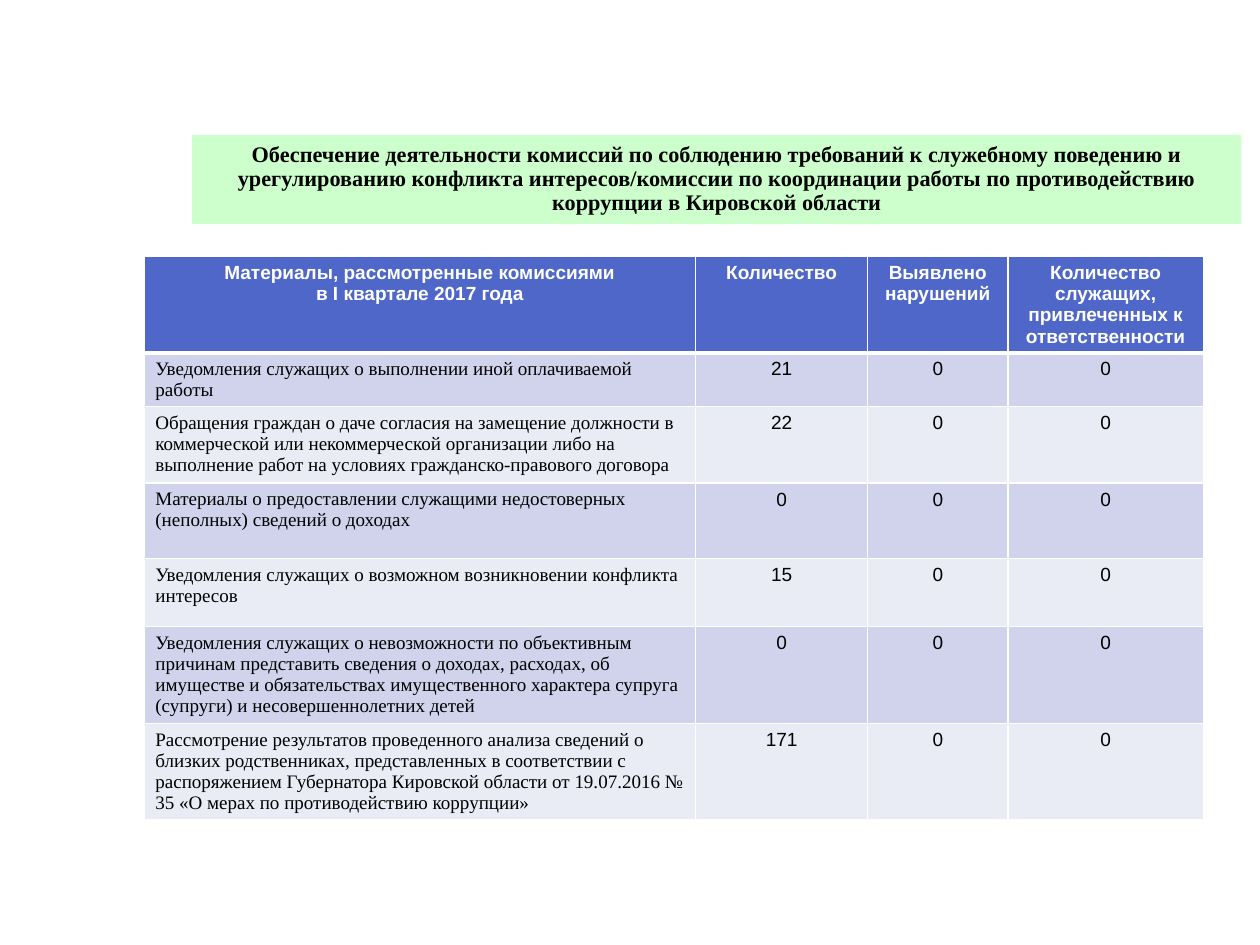
"""Build a slide with a title band and a table of materials reviewed by commissions."""
from lxml import etree
from pptx import Presentation
from pptx import util as u
from pptx.dml.color import RGBColor
from pptx.enum import shapes, text
from pptx.oxml.ns import qn

hues = {"head": "4E67C8", "odd": "D0D3EB", "even": "E9EBF5",
        "band": "CCFFCC", "white": "FFFFFF", "black": "000000"}
title = ("Обеспечение деятельности комиссий по соблюдению требований к служебному поведению и "
         "урегулированию конфликта интересов/комиссии по координации работы по противодействию "
         "коррупции в Кировской области")
rows = [
    ("Материалы, рассмотренные комиссиями\vв I квартале 2017 года", "Количество",
     "Выявлено нарушений", "Количество служащих, привлеченных к ответственности"),
    ("Уведомления служащих о выполнении иной оплачиваемой работы", "21", "0", "0"),
    ("Обращения граждан о даче согласия на замещение должности в коммерческой или "
     "некоммерческой организации либо на выполнение работ на условиях "
     "гражданско-правового договора", "22", "0", "0"),
    ("Материалы о предоставлении служащими недостоверных (неполных) сведений о доходах",
     "0", "0", "0"),
    ("Уведомления служащих о возможном возникновении конфликта интересов", "15", "0", "0"),
    ("Уведомления служащих о невозможности по объективным причинам представить сведения "
     "о доходах, расходах, об имуществе и обязательствах имущественного характера супруга "
     "(супруги) и несовершеннолетних детей", "0", "0", "0"),
    ("Рассмотрение результатов проведенного анализа сведений о близких родственниках, "
     "представленных в соответствии с распоряжением Губернатора Кировской области от "
     "19.07.2016 № 35 «О мерах по противодействию коррупции»", "171", "0", "0"),
]
widths = [12.26, 3.82, 3.12, 4.34]
heights = [1.9, 1.1, 1.7, 1.68, 1.51, 2.15, 1.9]


def write(frame, words, hue, align, space, **form):
    """Put one formatted paragraph into a text frame."""
    frame.text = words
    para = frame.paragraphs[0]
    para.alignment, para.line_spacing = align, space
    for key, value in form.items():
        setattr(para.font, key, value)
    para.font.color.rgb = RGBColor.from_string(hues[hue])


def edge(cell, side, width):
    """Draw a white border on one side of a cell."""
    line = etree.SubElement(cell._tc.get_or_add_tcPr(), qn(f"a:ln{side}"), w=str(u.Pt(width)))
    fill = etree.SubElement(line, qn("a:solidFill"))
    etree.SubElement(fill, qn("a:srgbClr"), val=hues["white"])


deck = Presentation()
deck.slide_width, deck.slide_height = u.Cm(28), u.Cm(21)
slide = deck.slides.add_slide(deck.slide_layouts[6])

grid = slide.shapes.add_table(len(rows), len(widths), u.Cm(3.2), u.Cm(5.69),
                              u.Cm(sum(widths)), u.Cm(sum(heights))).table
for col, width in zip(grid.columns, widths):
    col.width = u.Cm(width)
for row, height in zip(grid.rows, heights):
    row.height = u.Cm(height)

for r, row in enumerate(rows):
    for c, words in enumerate(row):
        cell = grid.cell(r, c)
        left = r > 0 and c == 0
        write(cell.text_frame, words, "black" if r else "white",
              text.PP_ALIGN.LEFT if left else text.PP_ALIGN.CENTER, 1.0,
              name="Times New Roman" if left else "Arial", size=u.Pt(12), bold=r == 0)
        for side, width in {"L": 1, "R": 1, "T": 3 if r == 1 else 1, "B": 1 if r else 3}.items():
            edge(cell, side, width)
        cell.fill.solid()
        tone = "head" if r == 0 else "odd" if r % 2 else "even"
        cell.fill.fore_color.rgb = RGBColor.from_string(hues[tone])

band = slide.shapes.add_shape(shapes.MSO_SHAPE.RECTANGLE,
                              u.Cm(4.27), u.Cm(3), u.Cm(23.32), u.Cm(1.98))
band.shadow.inherit = False
band.fill.solid()
band.fill.fore_color.rgb = RGBColor.from_string(hues["band"])
band.line.fill.background()
frame = band.text_frame
layout = {"word_wrap": True, "vertical_anchor": text.MSO_ANCHOR.MIDDLE, "margin_left": 0,
          "margin_right": 0, "margin_top": 0, "margin_bottom": 0}
for key, value in layout.items():
    setattr(frame, key, value)
write(frame, title, "black", text.PP_ALIGN.CENTER, 0.9,
      name="Times New Roman", size=u.Pt(14), bold=True)

deck.save("out.pptx")
